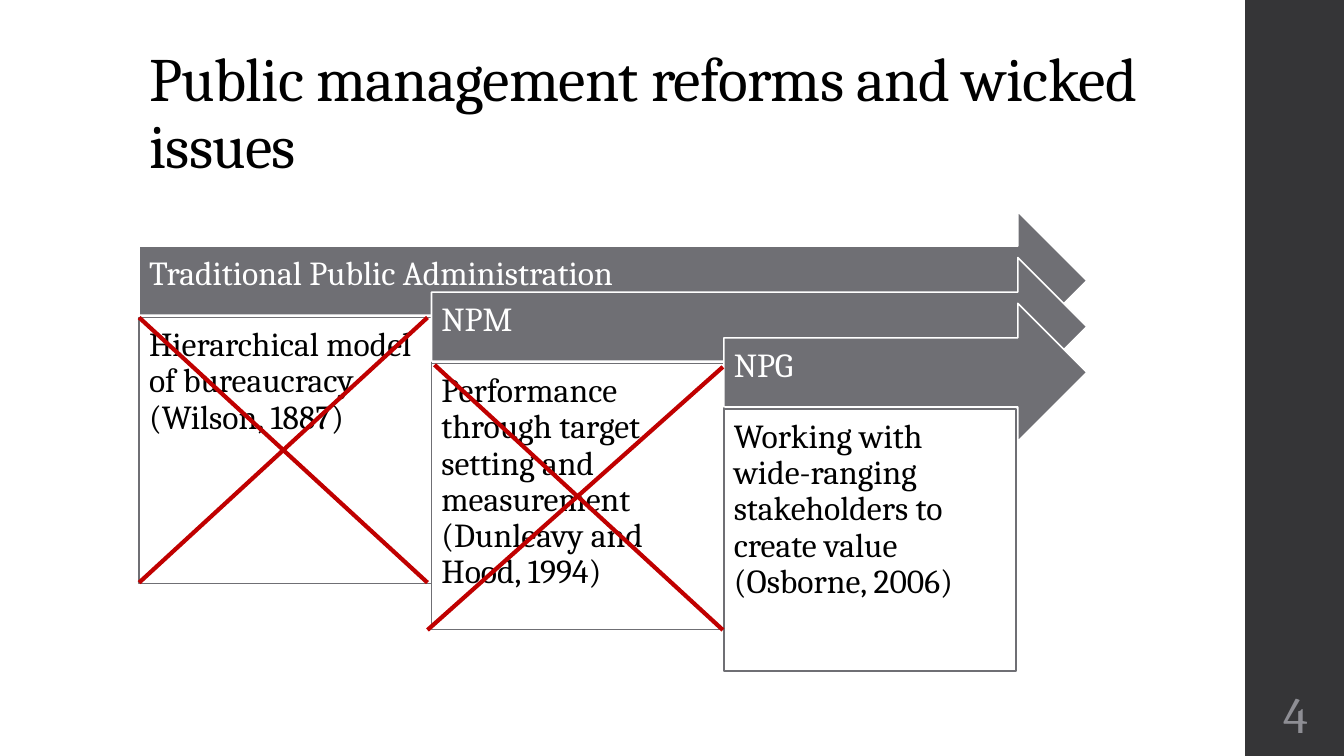
from pptx import Presentation
from pptx.dml.color import RGBColor
from pptx.enum.shapes import MSO_CONNECTOR, MSO_SHAPE
from pptx.enum.text import MSO_ANCHOR, MSO_AUTO_SIZE, PP_ALIGN
from pptx.oxml.ns import qn
from pptx.util import Inches, Pt
from lxml import etree

RECT, ARROW = MSO_SHAPE.RECTANGLE, MSO_SHAPE.RIGHT_ARROW
LINE = MSO_CONNECTOR.STRAIGHT
TOP, MID, BASE = MSO_ANCHOR.TOP, MSO_ANCHOR.MIDDLE, MSO_ANCHOR.BOTTOM
LEFT, CENTER = PP_ALIGN.LEFT, PP_ALIGN.CENTER

# Content
FONT = "Cambria"
BLACK, WHITE, GREY = "000000", "FFFFFF", "6F6F74"
DARK, PALE, RED = "353537", "8E8E94", "C00000"
TITLE = "Public management reforms and wicked issues"
NUMBER = "4"
# Heading, detail, detail fill, detail height
STAGES = [
    ("Traditional Public Administration",
     "Hierarchical model of bureaucracy (Wilson, 1887)", None, 2.64),
    ("NPM", "Performance through target setting and measurement "
     "(Dunleavy and Hood, 1994)", WHITE, 2.64),
    ("NPG", "Working with wide-ranging stakeholders to create value "
     "(Osborne, 2006)", WHITE, 2.6),
]
# Start and end of each stroke that crosses out a stage
STROKES = [
    ((1.38, 3.15), (4.24, 5.78)),
    ((4.24, 3.15), (1.38, 5.78)),
    ((7.17, 3.64), (4.24, 6.25)),
    ((4.31, 3.62), (7.17, 6.25)),
]

# Layout
X, Y, END = 1.38, 2.1, 10.78
STEP_X, STEP_Y = 2.9, 0.455
HEAD, DROP = 1.37, 1.05
BAR = 12.35


def color(code):
    return RGBColor.from_string(code)


def write(shape, text, size=24, ink=BLACK, anchor=TOP, align=LEFT,
          pad=(0.1, 0.1, 0.1, 0.1), lead=0.9, track=0):
    frame = shape.text_frame
    frame.word_wrap = True
    frame.auto_size = MSO_AUTO_SIZE.NONE
    frame.vertical_anchor = anchor
    (frame.margin_left, frame.margin_top,
     frame.margin_right, frame.margin_bottom) = map(Inches, pad)
    para = frame.paragraphs[0]
    para.alignment, para.line_spacing = align, lead
    run = para.add_run()
    run.text = text
    run.font.name, run.font.size = FONT, Pt(size)
    run.font.color.rgb = color(ink)
    if track:
        run._r.get_or_add_rPr().set("spc", str(int(track * 100)))


def block(kind, x, y, w, h, fill=None, line=None):
    shape = slide.shapes.add_shape(kind, *map(Inches, (x, y, w, h)))
    shape.shadow.inherit = False
    if fill:
        shape.fill.solid()
        shape.fill.fore_color.rgb = color(fill)
    else:
        shape.fill.background()
    if line:
        shape.line.color.rgb = color(line)
        shape.line.width = Pt(1.1)
    else:
        shape.line.fill.background()
    return shape


def stroke(start, end):
    line = slide.shapes.add_connector(LINE, *map(Inches, start + end))
    line.line.color.rgb = color(RED)
    line.line.width = Pt(3)
    etree.SubElement(line._element.spPr, qn("a:effectLst"))


deck = Presentation()
deck.slide_width, deck.slide_height = Inches(13.33), Inches(7.5)
slide = deck.slides.add_slide(deck.slide_layouts[5])

# Side bar and title
block(RECT, BAR, 0, 0.98, 7.5, fill=DARK)
title = slide.shapes.title
title.left, title.top = Inches(X), Inches(0.4)
title.width, title.height = Inches(10.6), Inches(1.45)
write(title, TITLE, size=44, anchor=BASE, pad=(0.1, 0.05, 0.1, 0.05),
      track=-0.5)

# Stages: each arrow starts further right and lower, all end together
for i, (name, detail, fill, tall) in enumerate(STAGES):
    x, y = X + i * STEP_X, Y + i * STEP_Y
    arrow = block(ARROW, x, y, END - x, HEAD, fill=GREY, line=WHITE)
    write(arrow, name, ink=WHITE, anchor=MID, pad=(0.1, 0.1, 0.28, 0.22))
    box = block(RECT, x, y + DROP, STEP_X, tall, fill=fill, line=GREY)
    write(box, detail)

# Slide number
page = slide.shapes.add_textbox(*map(Inches, (BAR, 6.75, 1, 0.65)))
write(page, NUMBER, size=36, ink=PALE, anchor=MID, align=CENTER,
      pad=(0.05,) * 4, lead=1.0)

# Crosses
for start, end in STROKES:
    stroke(start, end)

deck.save("out.pptx")
